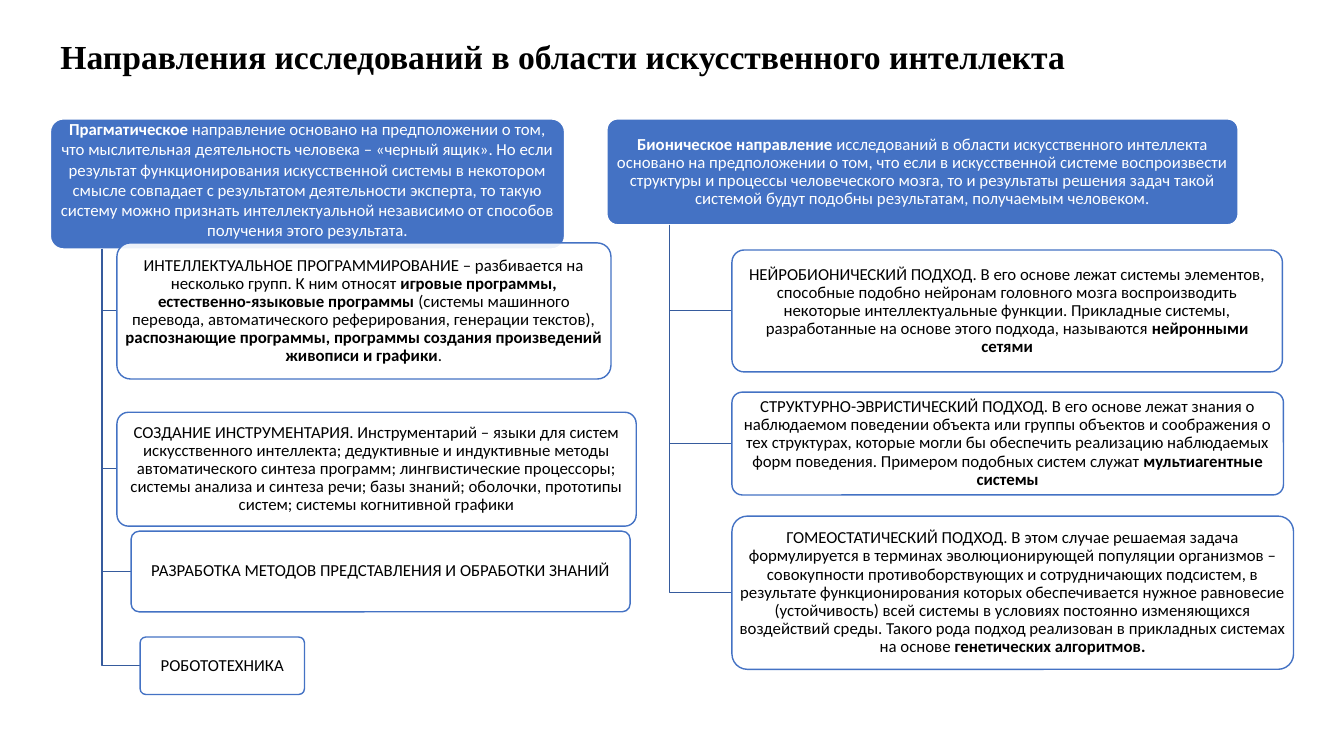
from dataclasses import dataclass

from lxml import etree
from pptx import Presentation
from pptx import util as u
from pptx.dml.color import RGBColor
from pptx.enum import shapes, text
from pptx.oxml.ns import qn

PX = 9144


@dataclass(frozen=True)
class Theme:
    heading_font: str = "Times New Roman"
    body_font: str = "Calibri"
    heading_size: int = 24
    body_size: int = 12
    line_width: int = 1
    black: str = "000000"
    white: str = "FFFFFF"
    accent: str = "4472C4"
    trunk: str = "365B9D"
    branch_opacity: int = 90


class Board:
    def __init__(self, slide, theme):
        self.slide = slide
        self.theme = theme

    def style_font(self, paragraph, family, size, color):
        paragraph.font.name = family
        paragraph.font.size = u.Pt(size)
        paragraph.font.color.rgb = RGBColor.from_string(color)

    def outline(self, shape, color):
        shape.shadow.inherit = False
        shape.line.color.rgb = RGBColor.from_string(color)
        shape.line.width = u.Pt(self.theme.line_width)

    def title(self, wording, left, top, width, height):
        heading = self.slide.shapes.title
        heading.left, heading.top = left * PX, top * PX
        heading.width, heading.height = width * PX, height * PX
        heading.text_frame.vertical_anchor = text.MSO_ANCHOR.MIDDLE
        paragraph = heading.text_frame.paragraphs[0]
        paragraph.text = wording
        paragraph.alignment = text.PP_ALIGN.LEFT
        paragraph.line_spacing = 0.9
        self.style_font(paragraph, self.theme.heading_font,
                        self.theme.heading_size, self.theme.black)
        paragraph.font.bold = True

    def box(self, wording, place, fill, line, color, spacing=0.9, bottom=2):
        card = self.slide.shapes.add_shape(
            shapes.MSO_SHAPE.ROUNDED_RECTANGLE, *(n * PX for n in place))
        card.adjustments[0] = 0.1
        card.fill.solid()
        card.fill.fore_color.rgb = RGBColor.from_string(fill)
        self.outline(card, line)
        frame = card.text_frame
        frame.word_wrap = True
        frame.vertical_anchor = text.MSO_ANCHOR.MIDDLE
        frame.margin_left = frame.margin_right = 3 * PX
        frame.margin_top, frame.margin_bottom = 2 * PX, bottom * PX
        paragraph = frame.paragraphs[0]
        paragraph.alignment = text.PP_ALIGN.CENTER
        paragraph.line_spacing = spacing
        self.style_font(paragraph, self.theme.body_font,
                        self.theme.body_size, color)
        for index, part in enumerate(wording.split("**")):
            if part:
                run = paragraph.add_run()
                run.text = part
                run.font.bold = index % 2 == 1
        return card

    def direction(self, wording, place, **layout):
        self.box(wording, place, self.theme.accent, self.theme.white,
                 self.theme.white, **layout)

    def approach(self, wording, place):
        card = self.box(wording, place, self.theme.white, self.theme.accent,
                        self.theme.black)
        tint = card.fill._xPr.find(qn("a:solidFill"))[0]
        etree.SubElement(tint, qn("a:alpha"),
                         val=str(self.theme.branch_opacity * 1000))

    def branch(self, parent, child):
        left, top, width, height = parent
        trunk_x = left + width // 10
        middle = child[1] + child[3] // 2
        builder = self.slide.shapes.build_freeform(trunk_x, top + height, PX)
        builder.add_line_segments(
            [(trunk_x, middle), (child[0], middle)], close=False)
        elbow = builder.convert_to_shape()
        elbow.fill.background()
        self.outline(elbow, self.theme.trunk)

    def tree(self, wording, place, approaches, **layout):
        self.direction(wording, place, **layout)
        for approach, spot in approaches:
            self.branch(place, spot)
            self.approach(approach, spot)


PRAGMATIC = (
    "**Прагматическое** направление основано на предположении о том, что "
    "мыслительная деятельность человека – «черный ящик». Но если результат "
    "функционирования искусственной системы в некотором смысле совпадает с "
    "результатом деятельности эксперта, то такую систему можно признать "
    "интеллектуальной независимо от способов получения этого результата.")

PRAGMATIC_APPROACHES = [
    ("СОЗДАНИЕ ИНСТРУМЕНТАРИЯ. Инструментарий – языки для систем "
     "искусственного интеллекта; дедуктивные и индуктивные методы "
     "автоматического синтеза программ; лингвистические процессоры; системы "
     "анализа и синтеза речи; базы знаний; оболочки, прототипы систем; "
     "системы когнитивной графики", (116, 409, 515, 113)),
    ("РАЗРАБОТКА МЕТОДОВ ПРЕДСТАВЛЕНИЯ И ОБРАБОТКИ ЗНАНИЙ",
     (130, 527, 495, 80)),
    ("РОБОТОТЕХНИКА", (139, 632, 163, 57)),
    ("ИНТЕЛЛЕКТУАЛЬНОЕ ПРОГРАММИРОВАНИЕ – разбивается на несколько групп. "
     "К ним относят **игровые программы, естественно-языковые программы** "
     "(системы машинного перевода, автоматического реферирования, генерации "
     "текстов), **распознающие программы, программы создания произведений "
     "живописи и графики**.", (116, 241, 490, 135)),
]

BIONIC = (
    "**Бионическое направление** исследований в области искусственного "
    "интеллекта основано на предположении о том, что если в искусственной "
    "системе воспроизвести структуры и процессы человеческого мозга, то и "
    "результаты решения задач такой системой будут подобны результатам, "
    "получаемым человеком.")

BIONIC_APPROACHES = [
    ("НЕЙРОБИОНИЧЕСКИЙ ПОДХОД. В его основе лежат системы элементов, "
     "способные подобно нейронам головного мозга воспроизводить некоторые "
     "интеллектуальные функции. Прикладные системы, разработанные на основе "
     "этого подхода, называются **нейронными сетями**",
     (726, 248, 546, 121)),
    ("СТРУКТУРНО-ЭВРИСТИЧЕСКИЙ ПОДХОД. В его основе лежат знания о "
     "наблюдаемом поведении объекта или группы объектов и соображения о тех "
     "структурах, которые могли бы обеспечить реализацию наблюдаемых форм "
     "поведения. Примером подобных систем служат **мультиагентные системы**",
     (726, 389, 547, 102)),
    ("ГОМЕОСТАТИЧЕСКИЙ ПОДХОД. В этом случае решаемая задача формулируется в "
     "терминах эволюционирующей популяции организмов – совокупности "
     "противоборствующих и сотрудничающих подсистем, в результате "
     "функционирования которых обеспечивается нужное равновесие "
     "(устойчивость) всей системы в условиях постоянно изменяющихся "
     "воздействий среды. Такого рода подход реализован в прикладных системах "
     "на основе **генетических алгоритмов.**", (726, 512, 557, 152)),
]


def main():
    deck = Presentation()
    deck.slide_width, deck.slide_height = 1333 * PX, 750 * PX
    board = Board(deck.slides.add_slide(deck.slide_layouts[5]), Theme())
    board.title("Направления исследований в области искусственного интеллекта",
                50, 7, 1259, 103)
    board.tree(PRAGMATIC, (50, 118, 510, 129), PRAGMATIC_APPROACHES,
               spacing=1.0, bottom=11)
    board.tree(BIONIC, (602, 118, 626, 105), BIONIC_APPROACHES)
    deck.save("out.pptx")


if __name__ == "__main__":
    main()
